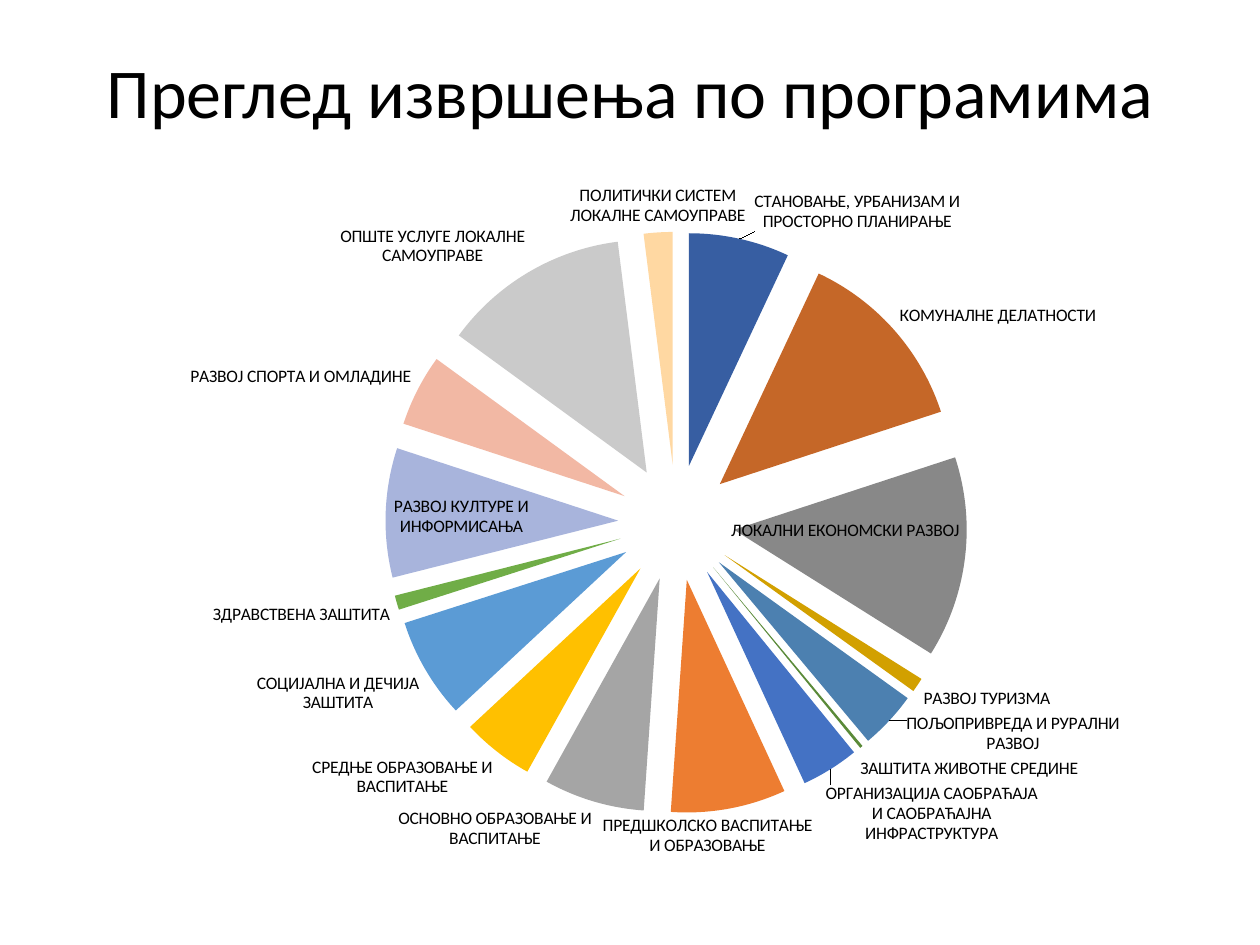
from typing import NamedTuple

from lxml.etree import SubElement
from pptx import Presentation
from pptx.chart.data import CategoryChartData
from pptx.dml.color import RGBColor
from pptx.enum.chart import XL_CHART_TYPE, XL_LABEL_POSITION
from pptx.enum.text import MSO_ANCHOR, PP_ALIGN
from pptx.oxml import parse_xml
from pptx.oxml.ns import nsdecls, qn
from pptx.util import Emu, Pt

PX = 914400 / 126
FONT = "Calibri"
BLACK = RGBColor(0, 0, 0)
EXPLOSION = 25


class Box(NamedTuple):
    left: int
    top: int
    width: int
    height: int

    def emu(self) -> list[Emu]:
        return [Emu(round(length * PX)) for length in self]


class Program(NamedTuple):
    name: str
    share: float
    color: RGBColor


TITLE_BOX = Box(87, 25, 1086, 142)
CHART_BOX = Box(87, 168, 1110, 724)
PIE_BOX = Box(386, 232, 582, 582)

PROGRAMS = [
    Program("СТАНОВАЊЕ, УРБАНИЗАМ И ПРОСТОРНО ПЛАНИРАЊЕ", 7, RGBColor(0x37, 0x5E, 0xA2)),
    Program("КОМУНАЛНЕ ДЕЛАТНОСТИ", 13, RGBColor(0xC5, 0x67, 0x28)),
    Program("ЛОКАЛНИ ЕКОНОМСКИ РАЗВОЈ", 14, RGBColor(0x88, 0x88, 0x88)),
    Program("РАЗВОЈ ТУРИЗМА", 1, RGBColor(0xD2, 0xA0, 0x00)),
    Program("ПОЉОПРИВРЕДА И РУРАЛНИ РАЗВОЈ", 4, RGBColor(0x4C, 0x80, 0xB0)),
    Program("ЗАШТИТА ЖИВОТНЕ СРЕДИНЕ", 0.2, RGBColor(0x5A, 0x8A, 0x39)),
    Program("ОРГАНИЗАЦИЈА САОБРАЋАЈА И САОБРАЋАЈНА ИНФРАСТРУКТУРА", 4, RGBColor(0x44, 0x72, 0xC4)),
    Program("ПРЕДШКОЛСКО ВАСПИТАЊЕ И ОБРАЗОВАЊЕ", 8, RGBColor(0xED, 0x7D, 0x31)),
    Program("ОСНОВНО ОБРАЗОВАЊЕ И ВАСПИТАЊЕ", 7, RGBColor(0xA5, 0xA5, 0xA5)),
    Program("СРЕДЊЕ ОБРАЗОВАЊЕ И ВАСПИТАЊЕ", 5, RGBColor(0xFF, 0xC0, 0x00)),
    Program("СОЦИЈАЛНА И ДЕЧИЈА ЗАШТИТА", 7, RGBColor(0x5B, 0x9B, 0xD5)),
    Program("ЗДРАВСТВЕНА ЗАШТИТА", 1, RGBColor(0x70, 0xAD, 0x47)),
    Program("РАЗВОЈ КУЛТУРЕ И ИНФОРМИСАЊА", 9, RGBColor(0xA8, 0xB4, 0xDC)),
    Program("РАЗВОЈ СПОРТА И ОМЛАДИНЕ", 5, RGBColor(0xF2, 0xB8, 0xA4)),
    Program("ОПШТЕ УСЛУГЕ ЛОКАЛНЕ САМОУПРАВЕ", 13, RGBColor(0xCA, 0xCA, 0xCA)),
    Program("ПОЛИТИЧКИ СИСТЕМ ЛОКАЛНЕ САМОУПРАВЕ", 2, RGBColor(0xFF, 0xD8, 0xA2)),
]


def add_text(slide, box: Box, text: str, *, size: int, color: RGBColor, align: PP_ALIGN) -> None:
    frame = slide.shapes.add_textbox(*box.emu()).text_frame
    frame.word_wrap = True
    frame.vertical_anchor = MSO_ANCHOR.MIDDLE
    para = frame.paragraphs[0]
    para.alignment = align
    para.line_spacing = 0.9
    span = para.add_run()
    span.text = text
    span.font.name = FONT
    span.font.size = Pt(size)
    span.font.color.rgb = color


def place_plot(chart, pie: Box, frame: Box) -> None:
    """Fix the plot area as fractions of the chart frame."""
    plot_area = chart.plots[0]._element.getparent()
    for old in plot_area.findall(qn("c:layout")):
        plot_area.remove(old)
    layout = parse_xml(f"<c:layout {nsdecls('c')}><c:manualLayout/></c:layout>")
    fractions = {
        "layoutTarget": "inner", "xMode": "edge", "yMode": "edge",
        "x": round((pie.left - frame.left) / frame.width, 3),
        "y": round((pie.top - frame.top) / frame.height, 3),
        "w": round(pie.width / frame.width, 3),
        "h": round(pie.height / frame.height, 3),
    }
    for tag, value in fractions.items():
        SubElement(layout[0], qn(f"c:{tag}")).set("val", str(value))
    plot_area.insert(0, layout)


def add_pie(slide, box: Box, programs: list[Program]) -> None:
    data = CategoryChartData(number_format="#,##0")
    data.categories = [program.name for program in programs]
    data.add_series("Series 1", [program.share for program in programs])
    chart = slide.shapes.add_chart(XL_CHART_TYPE.PIE, *box.emu(), data).chart
    chart.has_legend = False
    chart.has_title = False
    chart.font.name = FONT
    chart.font.size = Pt(10)
    chart.font.color.rgb = BLACK
    place_plot(chart, PIE_BOX, box)

    plot = chart.plots[0]
    plot.vary_by_categories = True
    series = plot.series[0]
    for index, program in enumerate(programs):
        fill = series.points[index].format.fill
        fill.solid()
        fill.fore_color.rgb = program.color
    explosion = parse_xml(f'<c:explosion {nsdecls("c")} val="{EXPLOSION}"/>')
    series._element.find(qn("c:dPt")).addprevious(explosion)

    labels = series.data_labels
    labels.show_category_name = True
    labels.show_value = False
    labels.show_percentage = False
    labels.position = XL_LABEL_POSITION.BEST_FIT


def main() -> None:
    deck = Presentation()
    deck.slide_width, deck.slide_height = Box(0, 0, 1260, 945).emu()[2:]
    slide = deck.slides.add_slide(deck.slide_layouts[6])
    add_text(slide, TITLE_BOX, "Преглед извршења по програмима",
             size=40, color=BLACK, align=PP_ALIGN.CENTER)
    add_pie(slide, CHART_BOX, PROGRAMS)
    deck.save("out.pptx")


if __name__ == "__main__":
    main()
